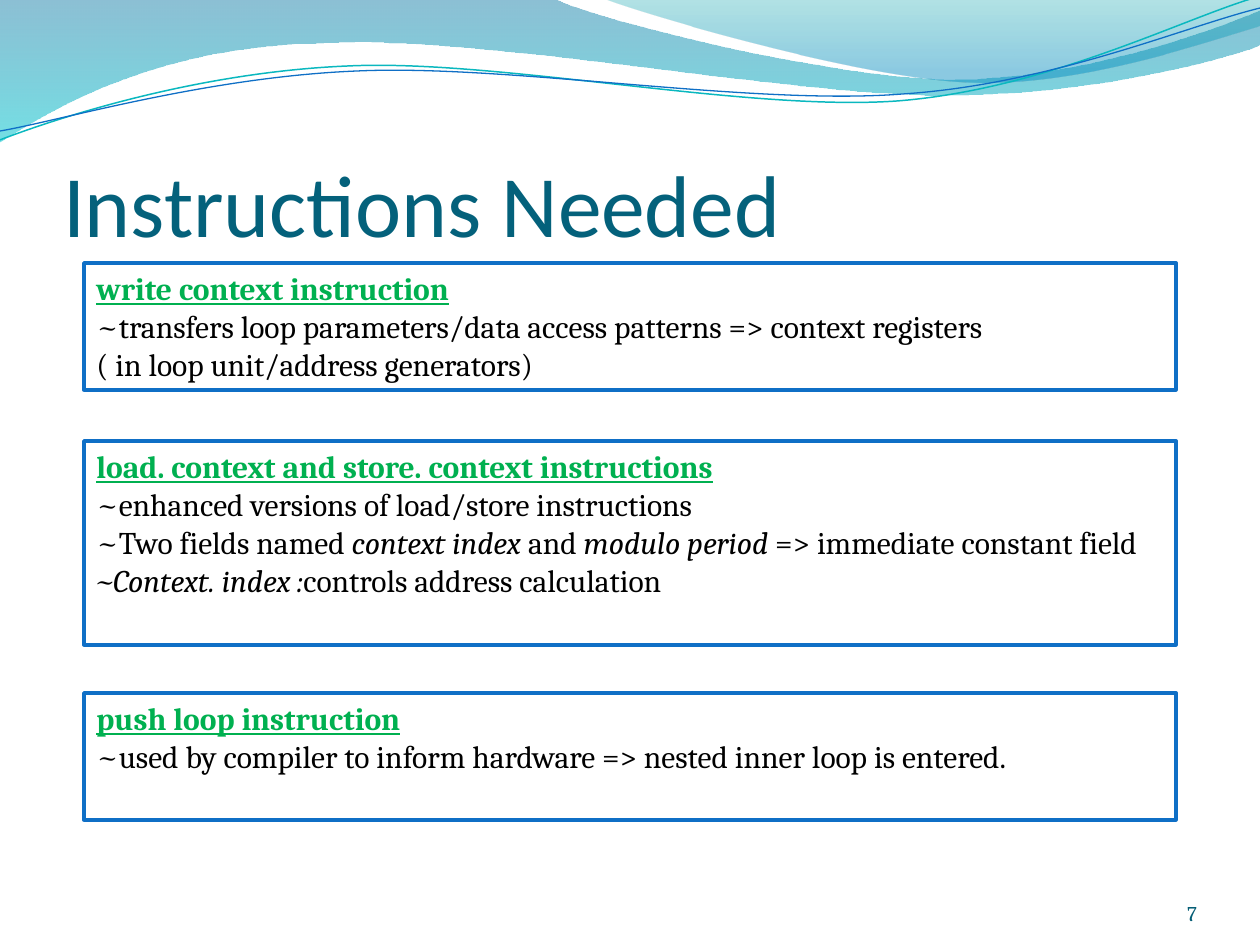
from math import cos, radians, sin
from lxml.etree import SubElement
from pptx import Presentation
from pptx.dml.color import RGBColor as Rgb
from pptx.enum.shapes import MSO_SHAPE as Shape
from pptx.enum.text import MSO_ANCHOR as Anchor, MSO_AUTO_SIZE as Fit, PP_ALIGN as Align
from pptx.oxml.ns import qn
from pptx.util import Pt

PX = 914400 / 126
TILT = 2.7
INK = {
    "title": "04617B", "head": "00B050", "body": "000000", "line": "0F6FC6",
    "box": "FFFFFF", "teal": "0AB8BF", "page": "045D75",
}
BANDS = [
    ((0, 0), [
        [(554, -1)],
        [(600, 21), (837, 79), (955, 79)],
        [(1075, 79), (1207, 33), (1260, 11)],
        [(1261, 45)],
        [(1239, 55), (1096, 96), (940, 95)],
        [(784, 95), (481, 35), (324, 43)],
        [(163, 45), (58, 105), (-1, 142)],
        [(0, 0)],
    ], [(0, "0074A1", 45), (1, "00C6CF", 55)]),
    ((604, -1), [
        [(641, 14), (859, 78), (969, 82)],
        [(1079, 87), (1211, 40), (1260, 26)],
        [(1260, 0)],
        [(604, -1)],
    ], [(0, "00A1A9", 30), (0.8, "008BBF", 45)]),
]
CURVES = [
    ((0, 140), [
        [(60, 117), (199, 72), (349, 66)],
        [(498, 59), (747, 112), (898, 101)],
        [(1048, 89), (1182, 19), (1257, -3)],
    ], (629, 72), "teal", 0.85),
    ((0, 131), [
        [(59, 121), (207, 77), (357, 71)],
        [(508, 64), (752, 106), (903, 94)],
        [(1053, 84), (1186, 26), (1260, 8)],
    ], (629, 74), "line", 0.75),
]
BOXES = [
    (263, 127, "write context instruction", [
        ["~transfers loop parameters/data access patterns => context registers"],
        ["( in loop unit/address generators)"],
    ]),
    (441, 204, "load. context and store. context instructions", [
        ["~enhanced versions of load/store instructions"],
        ["~Two fields named ", "context index ", "and", " modulo period",
         " => immediate constant field"],
        ["", "~Context. index :", "controls address calculation"],
    ]),
    (693, 127, "push loop instruction", [
        ["~used by compiler to inform hardware => nested inner loop is entered."],
    ]),
]


def px(*vals):
    """Turn px lengths into EMU."""
    return [round(val * PX) for val in vals]


def write(para, text, size=18, font="Cambria", color="body", bold=False,
          italic=False, under=False, align=Align.LEFT):
    """Add one formatted run to a paragraph."""
    para.alignment = align
    run = para.add_run()
    run.text = text
    face = run.font
    face.size, face.name = Pt(size), font
    face.bold, face.italic, face.underline = bold, italic, under
    face.color.rgb = Rgb.from_string(INK[color])


def turn(point, pivot):
    """Turn a point clockwise about a pivot by the tilt."""
    ang = radians(TILT)
    x, y = point[0] - pivot[0], point[1] - pivot[1]
    return (pivot[0] + x * cos(ang) - y * sin(ang),
            pivot[1] + x * sin(ang) + y * cos(ang))


def outline(slide, start, steps, close):
    """Draw a freeform of straight and cubic steps."""
    build = slide.shapes.build_freeform(*px(*start))
    build.add_line_segments([px(*pt) for step in steps for pt in step], close=close)
    shape = build.convert_to_shape()
    shape.shadow.inherit = False
    legs = iter(list(shape.element.spPr.iter(qn("a:lnTo"))))
    for step in steps:
        first, *rest = [next(legs) for _ in step]
        if rest:
            first.tag = qn("a:cubicBezTo")
        for leg in rest:
            first.append(leg[0])
            leg.getparent().remove(leg)
    return shape


def band(slide, start, steps, stops):
    """Draw a wave filled with a see-through gradient."""
    shape = outline(slide, start, steps, True)
    shape.line.fill.background()
    shape.fill.gradient()
    shape.fill.gradient_angle = 270
    for stop, (pos, color, _) in zip(shape.fill.gradient_stops, stops):
        stop.position = pos
        stop.color.rgb = Rgb.from_string(color)
    tints = shape.element.spPr.iter(qn("a:srgbClr"))
    for tint, (_, _, alpha) in zip(tints, stops):
        SubElement(tint, qn("a:alpha"), val=str(alpha * 1000))


def curve(slide, start, steps, pivot, color, width):
    """Draw an open, tilted curved line."""
    level = [[turn(pt, pivot) for pt in step] for step in steps]
    shape = outline(slide, turn(start, pivot), level, False)
    shape.rotation = 360 - TILT
    shape.fill.background()
    shape.line.color.rgb = Rgb.from_string(INK[color])
    shape.line.width = Pt(width)


def box(slide, top, height, head, lines):
    """Draw a framed box whose lines alternate plain and italic runs."""
    shape = slide.shapes.add_shape(Shape.RECTANGLE, *px(84, top, 1092, height))
    shape.shadow.inherit = False
    shape.fill.solid()
    shape.fill.fore_color.rgb = Rgb.from_string(INK["box"])
    shape.line.color.rgb = Rgb.from_string(INK["line"])
    shape.line.width = Pt(2)
    frame = shape.text_frame
    frame.word_wrap, frame.vertical_anchor = True, Anchor.TOP
    write(frame.paragraphs[0], head, color="head", bold=True, under=True)
    for line in lines:
        para = frame.add_paragraph()
        for num, part in enumerate(line):
            if part:
                write(para, part, italic=num % 2 == 1)


def label(shape, text, inset=0, **form):
    """Write one bottom-anchored line into a shape."""
    frame = shape.text_frame
    frame.word_wrap, frame.auto_size = True, Fit.NONE
    frame.vertical_anchor = Anchor.BOTTOM
    frame.margin_left = frame.margin_right = frame.margin_bottom = 0
    frame.margin_top = px(inset)[0]
    write(frame.paragraphs[0], text, **form)


def main():
    """Build and save the slide."""
    deck = Presentation()
    deck.slide_width, deck.slide_height = px(1260, 945)
    slide = deck.slides.add_slide(deck.slide_layouts[5])
    for item in BANDS:
        band(slide, *item)
    for item in CURVES:
        curve(slide, *item)
    title = slide.shapes.title
    title.left, title.top, title.width, title.height = px(63, 97, 1134, 158)
    label(title, "Instructions Needed", inset=6, size=50, font="Calibri", color="title")
    for item in BOXES:
        box(slide, *item)
    page = slide.shapes.add_textbox(*px(1092, 876, 105, 50))
    label(page, "7", size=12, color="page", align=Align.RIGHT)
    deck.save("out.pptx")


if __name__ == "__main__":
    main()
